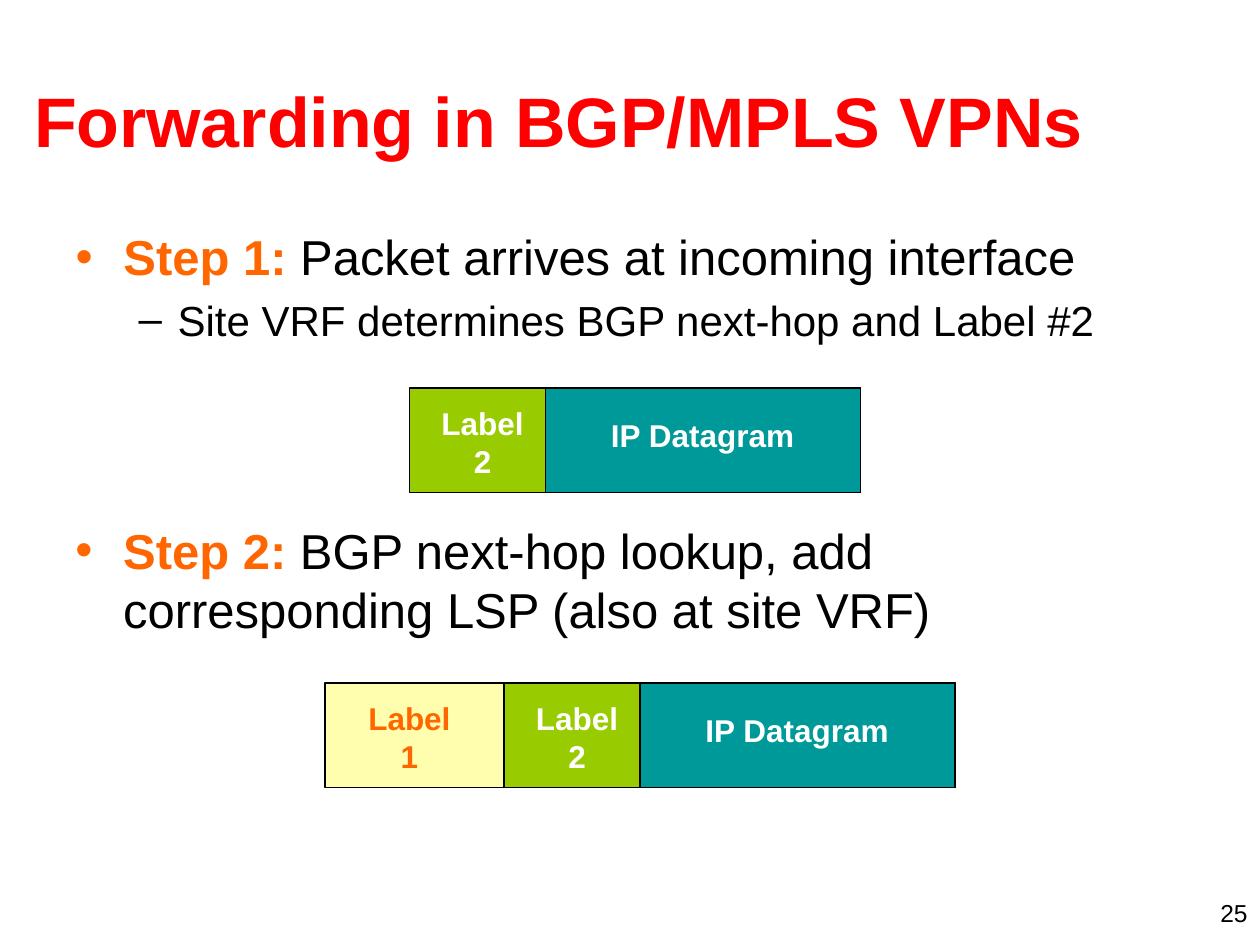
from lxml.etree import SubElement
from pptx import Presentation
from pptx.dml.color import RGBColor
from pptx.enum.shapes import MSO_SHAPE
from pptx.enum.text import MSO_ANCHOR, MSO_AUTO_SIZE, PP_ALIGN
from pptx.oxml.ns import qn
from pptx.util import Inches, Pt

BLACK = RGBColor(0x00, 0x00, 0x00)
WHITE = RGBColor(0xFF, 0xFF, 0xFF)
RED = RGBColor(0xFF, 0x00, 0x00)
ORANGE = RGBColor(0xFF, 0x66, 0x00)
GREEN = RGBColor(0x99, 0xCC, 0x00)
TEAL = RGBColor(0x00, 0x99, 0x99)
YELLOW = RGBColor(0xFE, 0xFE, 0xAE)

# Bullet character, left margin and hanging indent in inches, text size
BULLET_LEVELS = [("•", 0.38, 0.38, 28), ("–", 0.81, 0.31, 24)]

# Name: offset from the datagram, fill, text, text colour, text box (x, y, width, height), alignment
DATAGRAM_WIDTH, PACKET_HEIGHT = 2.5, 0.83
SEGMENTS = {
    "label 1": (-2.5, YELLOW, "Label\n1", ORANGE, (0.17, 0.08, 1, 0.7), PP_ALIGN.CENTER),
    "label 2": (-1.08, GREEN, "Label\n2", WHITE, (0.08, 0.08, 1, 0.7), PP_ALIGN.CENTER),
    "datagram": (0, TEAL, "IP Datagram", WHITE, (0.42, 0.17, 1.75, 0.4), PP_ALIGN.LEFT),
}


class SlideBuilder:
    def __init__(self, page, font_name="Arial"):
        self.page = page
        self.font_name = font_name

    def place(self, box, left, top, width, height):
        frame = {"left": left, "top": top, "width": width, "height": height}
        for name, value in frame.items():
            setattr(box, name, Inches(value))

    def span(self, para, text, size, color, bold=False):
        """Add formatted text, with a line break at each newline."""
        for number, line in enumerate(text.split("\n")):
            if number:
                para.add_line_break()
            run = para.add_run()
            run.text = line
            style = {"name": self.font_name, "size": Pt(size), "bold": bold}
            for name, value in style.items():
                setattr(run.font, name, value)
            run.font.color.rgb = color

    def title(self, text, *place):
        box = self.page.shapes.title
        self.place(box, *place)
        box.text_frame.vertical_anchor = MSO_ANCHOR.MIDDLE
        box.text_frame.auto_size = MSO_AUTO_SIZE.NONE
        para = box.text_frame.paragraphs[0]
        para.alignment = PP_ALIGN.LEFT
        self.span(para, text, 40, RED, bold=True)

    def text_box(self, *place):
        box = self.page.shapes.add_textbox(*map(Inches, place))
        box.text_frame.word_wrap = True
        return box

    def text(self, text, size, color, bold, alignment, *place):
        para = self.text_box(*place).text_frame.paragraphs[0]
        para.alignment = alignment
        self.span(para, text, size, color, bold)

    def bullet(self, para, level):
        mark, margin, hanging, size = BULLET_LEVELS[level]
        para.level = level
        properties = para._p.get_or_add_pPr()
        properties.set("marL", str(Inches(margin)))
        properties.set("indent", str(-Inches(hanging)))
        SubElement(properties, qn("a:buFont"), typeface=self.font_name)
        SubElement(properties, qn("a:buChar"), char=mark)
        return size

    def step(self, box, heading, text, detail=None):
        """Fill a box with a headed bullet and an optional second-level bullet."""
        frame = box.text_frame
        frame.auto_size = MSO_AUTO_SIZE.NONE
        para = frame.paragraphs[0]
        size = self.bullet(para, 0)
        para.space_before = Pt(0)
        self.span(para, heading, size, ORANGE, bold=True)
        self.span(para, text, size, BLACK)
        if detail:
            para = frame.add_paragraph()
            size = self.bullet(para, 1)
            para.space_before = Pt(0.2 * size)
            self.span(para, detail, size, BLACK)

    def rectangle(self, fill, *place):
        shape = self.page.shapes.add_shape(MSO_SHAPE.RECTANGLE, *map(Inches, place))
        shape.shadow.inherit = False
        shape.fill.solid()
        shape.fill.fore_color.rgb = fill
        shape.line.color.rgb = BLACK
        shape.line.width = Pt(0.75)

    def packet(self, datagram_left, top, names):
        """Draw overlapping segments that all end at the right of the datagram."""
        for name in names:
            offset, fill, text, color, (x, y, width, height), alignment = SEGMENTS[name]
            left = datagram_left + offset
            self.rectangle(fill, left, top, DATAGRAM_WIDTH - offset, PACKET_HEIGHT)
            self.text(text, 18, color, True, alignment, left + x, top + y, width, height)


def main():
    deck = Presentation()
    deck.slide_width, deck.slide_height = Inches(10), Inches(7.5)
    page = deck.slides.add_slide(deck.slide_layouts[1])
    builder = SlideBuilder(page)

    builder.title("Forwarding in BGP/MPLS VPNs", 0.17, 0.32, 9.58, 1.25)

    body = page.placeholders[1]
    builder.place(body, 0.5, 1.75, 9, 1.17)
    builder.step(body, "Step 1:", " Packet arrives at incoming interface",
                 "Site VRF determines BGP next-hop and Label #2")
    builder.packet(4.33, 3.08, ["label 2", "datagram"])

    builder.step(builder.text_box(0.5, 4.08, 9, 1.17), "Step 2:",
                 " BGP next-hop lookup, add corresponding LSP (also at site VRF)")
    builder.packet(5.08, 5.42, ["label 1", "label 2", "datagram"])

    builder.text("25", 14, BLACK, False, PP_ALIGN.RIGHT, 7.67, 7.08, 2.33, 0.25)
    deck.save("out.pptx")


if __name__ == "__main__":
    main()
